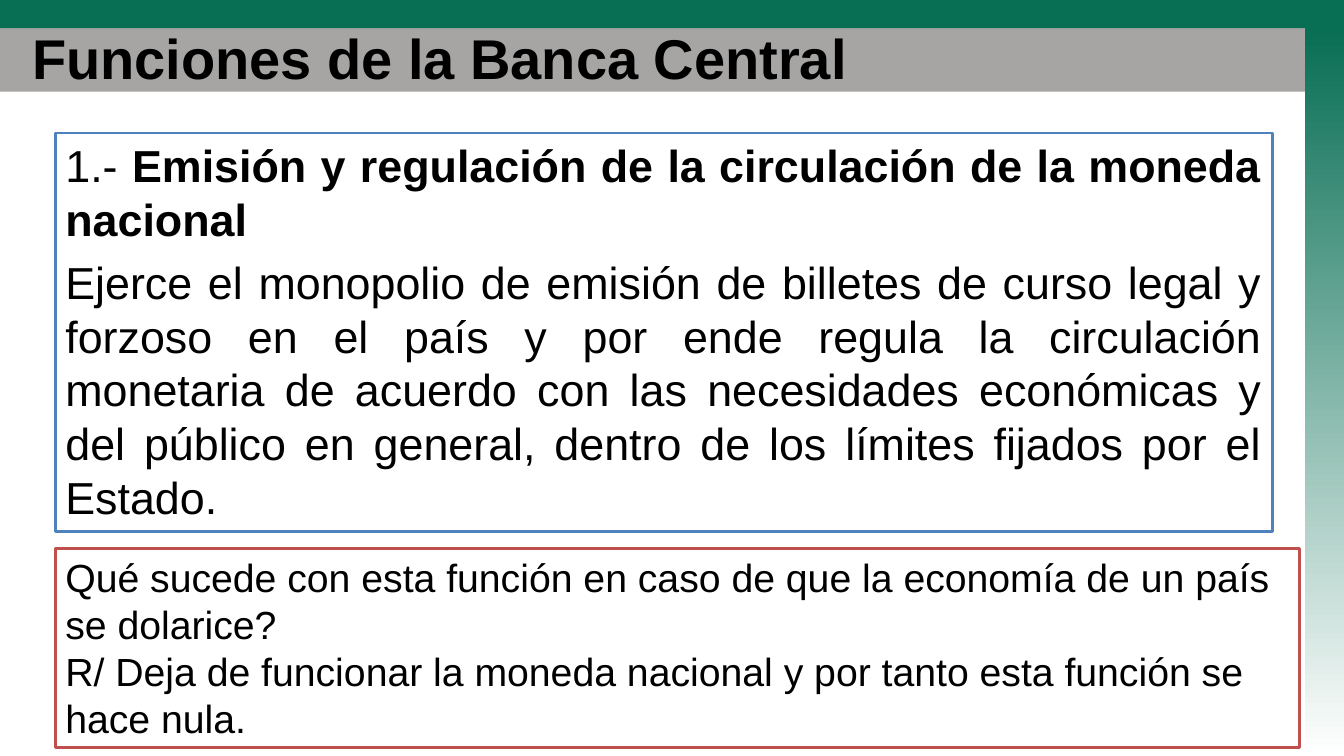
from pptx import Presentation
from pptx.dml.color import RGBColor
from pptx.enum.shapes import MSO_SHAPE as Shape
from pptx.enum.text import MSO_ANCHOR as Anchor, PP_ALIGN as Align
from pptx.util import Inches, Pt

COLORS = {
    "green": "086E54",
    "gray": "A6A5A4",
    "white": "FFFFFF",
    "black": "000000",
    "blue": "4F81BD",
    "red": "C0504D",
}
WIDTH, HEIGHT = 13.33, 7.5
TOP_BAND = 0.28
SIDE_BAND = 0.39
LEFT = 0.55

deck = Presentation()
deck.slide_width, deck.slide_height = Inches(WIDTH), Inches(HEIGHT)
page = deck.slides.add_slide(deck.slide_layouts[6])


def color(name):
    return RGBColor.from_string(COLORS[name])


def write(box, paragraphs, size, align=Align.LEFT, anchor=Anchor.TOP, gap=0):
    frame = box.text_frame
    frame.word_wrap = True
    frame.vertical_anchor = anchor
    for index, runs in enumerate(paragraphs):
        para = frame.add_paragraph() if index else frame.paragraphs[0]
        para.alignment = align
        para.space_before = Pt(gap if index else 0)
        for text, bold in runs:
            span = para.add_run()
            span.text = text
            span.font.name = "Arial"
            span.font.size = Pt(size)
            span.font.bold = bold
            span.font.color.rgb = color("black")


panels = {}
for name, left, top, width, height, fill, line in [
    ("title band", 0, TOP_BAND, WIDTH, 0.63, "gray", None),
    ("top band", 0, 0, WIDTH, TOP_BAND, "green", None),
    ("side band", WIDTH - SIDE_BAND, TOP_BAND, SIDE_BAND, HEIGHT - TOP_BAND, "green", None),
    ("function", LEFT, 1.32, 12.07, 3.95, "white", "blue"),
    ("question", LEFT, 5.44, 12.34, 1.98, "white", "red"),
]:
    panel = page.shapes.add_shape(
        Shape.RECTANGLE, Inches(left), Inches(top), Inches(width), Inches(height)
    )
    panel.shadow.inherit = False
    panel.fill.solid()
    panel.fill.fore_color.rgb = color(fill)
    if line:
        panel.line.color.rgb = color(line)
        panel.line.width = Pt(2)
    else:
        panel.line.fill.background()
    panels[name] = panel

fade = panels["side band"].fill
fade.gradient()
fade.gradient_angle = 270
for stop, name in zip(fade.gradient_stops, ["green", "white"]):
    stop.color.rgb = color(name)

title = page.shapes.add_textbox(Inches(0.22), Inches(0.3), Inches(12.67), Inches(0.53))
write(title, [[("Funciones de la Banca Central", True)]], size=40, anchor=Anchor.MIDDLE)

write(
    panels["function"],
    [
        [
            ("1.- ", False),
            ("Emisión y regulación de la circulación de la moneda nacional", True),
        ],
        [
            (
                "Ejerce el monopolio de emisión de billetes de curso legal y forzoso en el "
                "país y por ende regula la circulación monetaria de acuerdo con las "
                "necesidades económicas y del público en general, dentro de los límites "
                "fijados por el Estado.",
                False,
            )
        ],
    ],
    size=32,
    align=Align.JUSTIFY,
    gap=6.4,
)

write(
    panels["question"],
    [
        [("Qué sucede con esta función en caso de que la economía de un país se dolarice?", False)],
        [("R/ Deja de funcionar la moneda nacional y por tanto esta función se hace nula.", False)],
    ],
    size=28,
)

deck.save("out.pptx")
